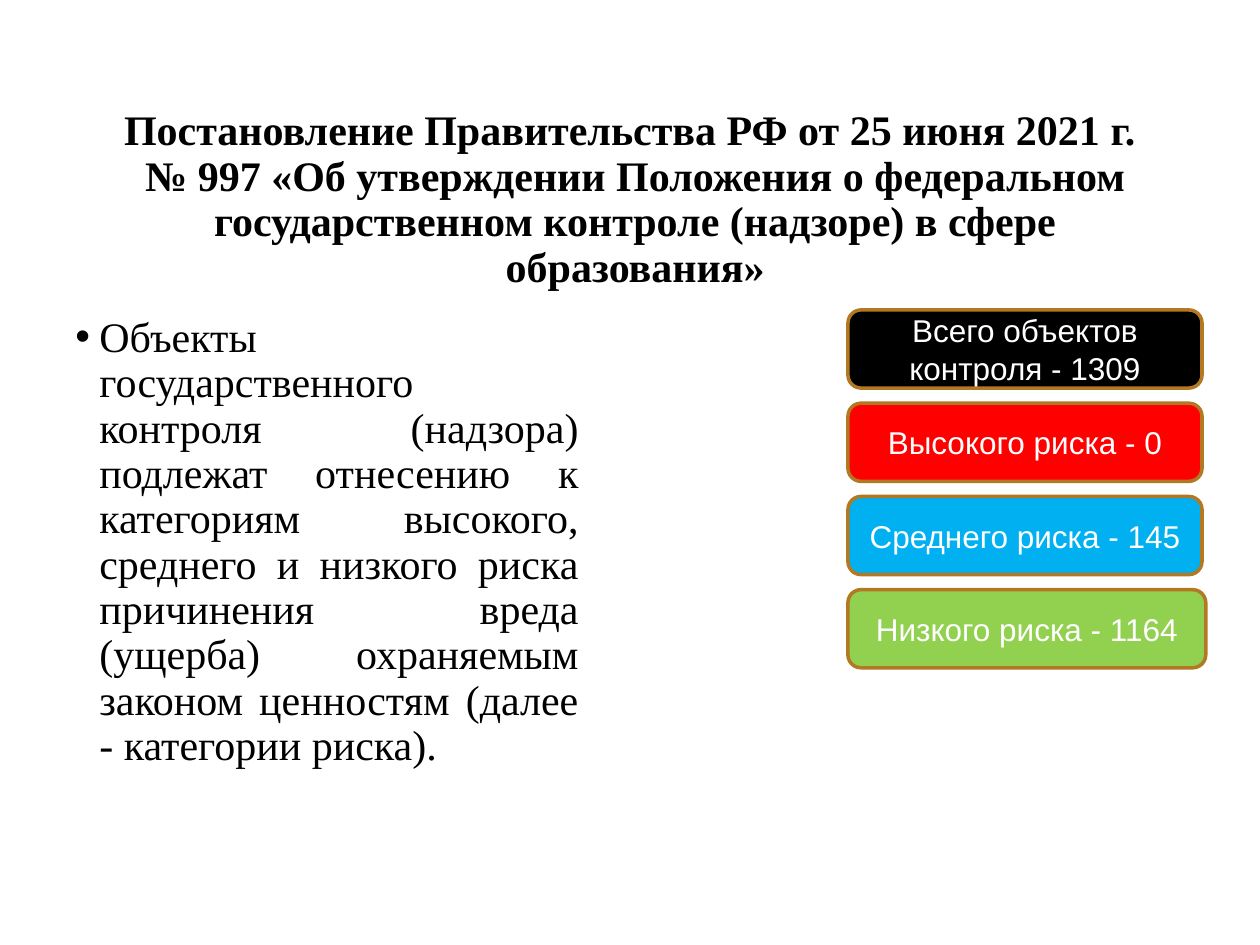
from lxml import etree
from pptx import Presentation
from pptx.dml.color import RGBColor
from pptx.enum.shapes import MSO_SHAPE as Preset
from pptx.enum.text import MSO_ANCHOR as Anchor, MSO_AUTO_SIZE as AutoSize, PP_ALIGN as Align
from pptx.oxml.ns import qn
from pptx.util import Inches, Pt

COLORS = {
    "text": "000000",
    "label": "FFFFFF",
    "border": "B27822",
    "total": "000000",
    "high": "FF0000",
    "medium": "00B0F0",
    "low": "92D050",
}

TITLE = (
    "Постановление Правительства РФ от 25 июня 2021 г. \v"
    "№ 997 «Об утверждении Положения о федеральном "
    "государственном контроле (надзоре) в сфере образования»"
)
RULE = (
    "Объекты государственного контроля (надзора) подлежат отнесению к "
    "категориям высокого, среднего и низкого риска причинения вреда (ущерба) "
    "охраняемым законом ценностям (далее - категории риска)."
)
# Label, colour key, box width in inches
RISK_GROUPS = [
    ("Всего объектов контроля - 1309", "total", 2.81),
    ("Высокого риска - 0", "high", 2.81),
    ("Среднего риска - 145", "medium", 2.81),
    ("Низкого риска - 1164", "low", 2.84),
]

SERIF = {"name": "Times New Roman", "size": Pt(24)}
SANS = {"name": "Arial", "size": Pt(18), "bold": False}


def color(key):
    return RGBColor.from_string(COLORS[key])


def set_attributes(target, values):
    for name, value in values.items():
        setattr(target, name, value)


def write_text(frame, text, font, color_key, frame_format, paragraph_format):
    set_attributes(frame, {"word_wrap": True, "auto_size": AutoSize.NONE, **frame_format})
    frame.text = text
    paragraph = frame.paragraphs[0]
    set_attributes(paragraph, paragraph_format)
    for run in paragraph.runs:
        set_attributes(run.font, font)
        run.font.color.rgb = color(color_key)
    return paragraph


def place_title(title, left, top, width, height):
    set_attributes(title, {"left": left, "top": top, "width": width, "height": height})
    write_text(title.text_frame, TITLE, {**SERIF, "bold": True}, "text",
               {"vertical_anchor": Anchor.MIDDLE},
               {"alignment": Align.CENTER, "line_spacing": 0.9})


def add_rule(slide, left, top, width, height):
    """Add the bulleted statement on risk categories."""
    box = slide.shapes.add_textbox(left, top, width, height)
    paragraph = write_text(box.text_frame, RULE, SERIF, "text",
                           {"vertical_anchor": Anchor.TOP},
                           {"alignment": Align.JUSTIFY, "line_spacing": 0.9})
    properties = paragraph._p.get_or_add_pPr()
    indent = Inches(0.19)
    properties.set("marL", str(indent))
    properties.set("indent", str(-indent))
    etree.SubElement(properties, qn("a:buFont")).set("typeface", "Arial")
    etree.SubElement(properties, qn("a:buChar")).set("char", "•")


def add_risk_groups(slide, left, top, height, gap):
    """Stack one rounded box for each risk group."""
    for row, (label, color_key, width) in enumerate(RISK_GROUPS):
        box = slide.shapes.add_shape(Preset.ROUNDED_RECTANGLE, left,
                                     top + row * (height + gap), Inches(width), height)
        box.shadow.inherit = False
        box.fill.solid()
        box.fill.fore_color.rgb = color(color_key)
        box.line.color.rgb = color("border")
        box.line.width = Pt(2)
        write_text(box.text_frame, label, SANS, "label",
                   {"vertical_anchor": Anchor.MIDDLE}, {"alignment": Align.CENTER})


def main():
    deck = Presentation()
    set_attributes(deck, {"slide_width": Inches(10), "slide_height": Inches(7.5)})
    slide = deck.slides.add_slide(deck.slide_layouts[5])
    place_title(slide.shapes.title, Inches(0.54), Inches(0.92), Inches(9), Inches(1.34))
    content_top = Inches(2.46)
    add_rule(slide, Inches(0.5), content_top, Inches(4.19), Inches(4.2))
    add_risk_groups(slide, Inches(6.73), content_top, Inches(0.62), Inches(0.12))
    deck.save("out.pptx")


if __name__ == "__main__":
    main()
